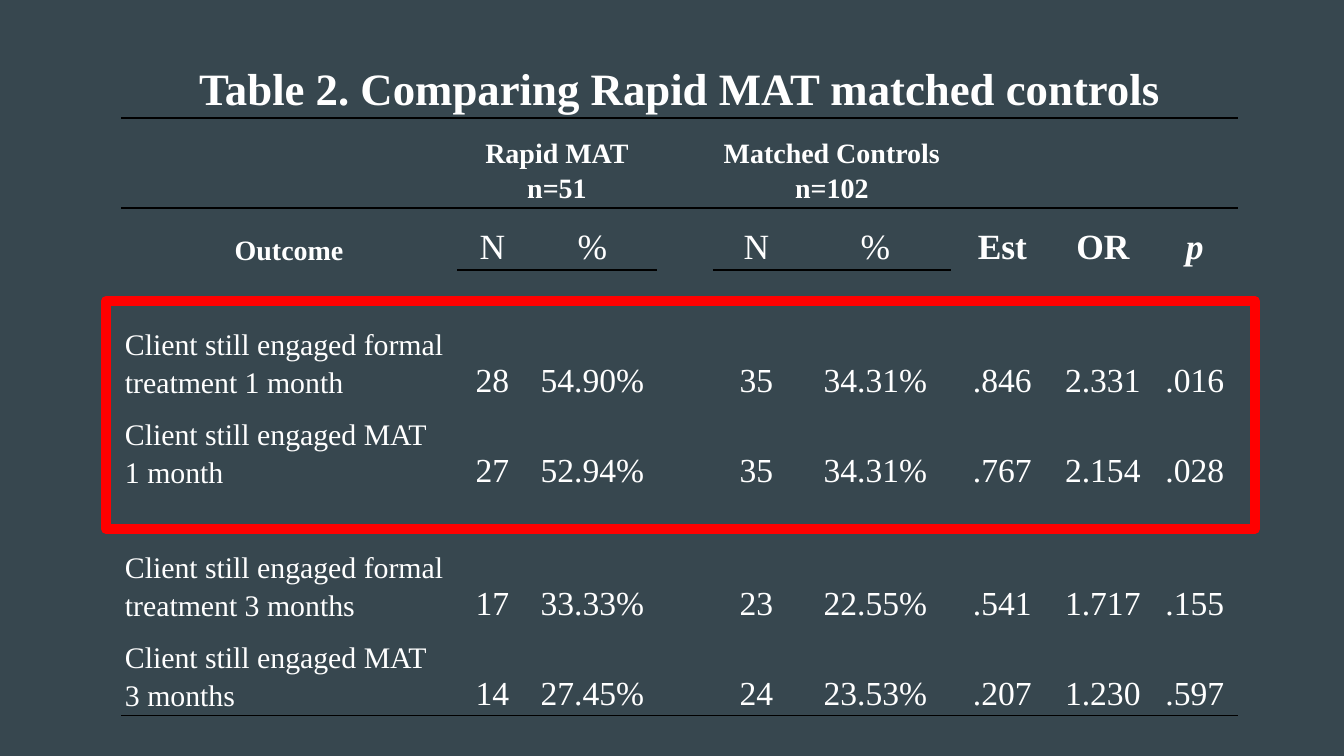
from lxml.etree import SubElement
from pptx import Presentation
from pptx.dml.color import RGBColor
from pptx.enum.shapes import MSO_SHAPE
from pptx.enum.text import MSO_ANCHOR, PP_ALIGN
from pptx.oxml import parse_xml
from pptx.oxml.ns import nsdecls, qn
from pptx.util import Emu, Pt

EMU_PER_PX = 914400 / 134.4
NO_STYLE = "{2D5ABB26-0587-4C30-8999-92F81FD0307C}"
COLUMN_WIDTHS = [336, 71, 129, 56, 87, 151, 103, 98, 86]
ROW_HEIGHTS = [118, 90, 62, 133, 90, 133, 90]
TITLE = "Table 2. Comparing Rapid MAT matched controls"
GROUPS = {1: "Rapid MAT\nn=51", 4: "Matched Controls\nn=102"}
HEADINGS = ["Outcome", "N", "%", "", "N", "%", "Est", "OR", "p"]
RESULTS = [
    ["Client still engaged formal\ntreatment 1 month",
     "28", "54.90%", "", "35", "34.31%", ".846", "2.331", ".016"],
    ["Client still engaged MAT\n1 month",
     "27", "52.94%", "", "35", "34.31%", ".767", "2.154", ".028"],
    ["Client still engaged formal\ntreatment 3 months",
     "17", "33.33%", "", "23", "22.55%", ".541", "1.717", ".155"],
    ["Client still engaged MAT\n3 months",
     "14", "27.45%", "", "24", "23.53%", ".207", "1.230", ".597"],
]
ALL_COLUMNS = range(len(COLUMN_WIDTHS))
RULED_COLUMNS = {0: ALL_COLUMNS, 1: ALL_COLUMNS, 2: [1, 2, 4, 5], 6: ALL_COLUMNS}


def px(length):
    return Emu(round(length * EMU_PER_PX))


def color(value):
    return RGBColor.from_string(value)


def write_cell(cell, text, size, bold=False, italic=False, align=PP_ALIGN.CENTER, side=4):
    cell.vertical_anchor = MSO_ANCHOR.BOTTOM
    cell.margin_left = cell.margin_right = px(side)
    cell.margin_top = cell.margin_bottom = px(3)
    cell.text_frame.text = text
    for para in cell.text_frame.paragraphs:
        para.alignment = align
        para.line_spacing = 1.15
        for span in para.runs:
            span.font.name = "Times New Roman"
            span.font.size = Pt(size)
            span.font.bold = bold
            span.font.italic = italic
            span.font.color.rgb = color("FFFFFF")


def rule_below(cell):
    line = parse_xml(
        f'<a:lnB {nsdecls("a")} w="{Pt(0.75)}"><a:solidFill>'
        '<a:srgbClr val="000000"/></a:solidFill></a:lnB>'
    )
    cell._tc.get_or_add_tcPr().insert(0, line)


def add_plain_table(page):
    frame = page.shapes.add_table(
        len(ROW_HEIGHTS), len(COLUMN_WIDTHS),
        px(121), 0, px(sum(COLUMN_WIDTHS)), px(sum(ROW_HEIGHTS)),
    )
    table = frame.table
    table.first_row = table.horz_banding = False
    next(frame._element.iter(qn("a:tableStyleId"))).text = NO_STYLE
    for column, width in zip(table.columns, COLUMN_WIDTHS):
        column.width = px(width)
    for row, height in zip(table.rows, ROW_HEIGHTS):
        row.height = px(height)
    for cell in table.iter_cells():
        cell.fill.background()
    for row, columns in RULED_COLUMNS.items():
        for column in columns:
            rule_below(table.cell(row, column))
    return table


def fill_headings(table):
    table.cell(0, 0).merge(table.cell(0, len(COLUMN_WIDTHS) - 1))
    write_cell(table.cell(0, 0), TITLE, 24, bold=True, side=13)
    for column, text in GROUPS.items():
        table.cell(1, column).merge(table.cell(1, column + 1))
        write_cell(table.cell(1, column), text, 15, bold=True)
    for column, text in enumerate(HEADINGS):
        size = 15 if column == 0 else 19
        bold = text not in ("N", "%")
        write_cell(table.cell(2, column), text, size, bold, italic=text == "p")


def fill_results(table):
    for row, (outcome, *values) in enumerate(RESULTS, start=3):
        write_cell(table.cell(row, 0), outcome, 16, align=PP_ALIGN.LEFT)
        for column, value in enumerate(values, start=1):
            write_cell(table.cell(row, column), value, 18)


def add_highlight(page, left, top, width, height):
    box = page.shapes.add_shape(
        MSO_SHAPE.RECTANGLE, px(left), px(top), px(width), px(height)
    )
    box.shadow.inherit = False
    box.fill.background()
    box.line.color.rgb = color("FF0000")
    box.line.width = Pt(5.25)
    SubElement(box.line._get_or_add_ln(), qn("a:round"))


def main():
    deck = Presentation()
    deck.slide_width, deck.slide_height = px(1344), px(756)
    page = deck.slides.add_slide(deck.slide_layouts[6])
    page.background.fill.solid()
    page.background.fill.fore_color.rgb = color("37474F")
    table = add_plain_table(page)
    fill_headings(table)
    fill_results(table)
    add_highlight(page, 106, 301, 1149, 228)
    deck.save("out.pptx")


if __name__ == "__main__":
    main()
